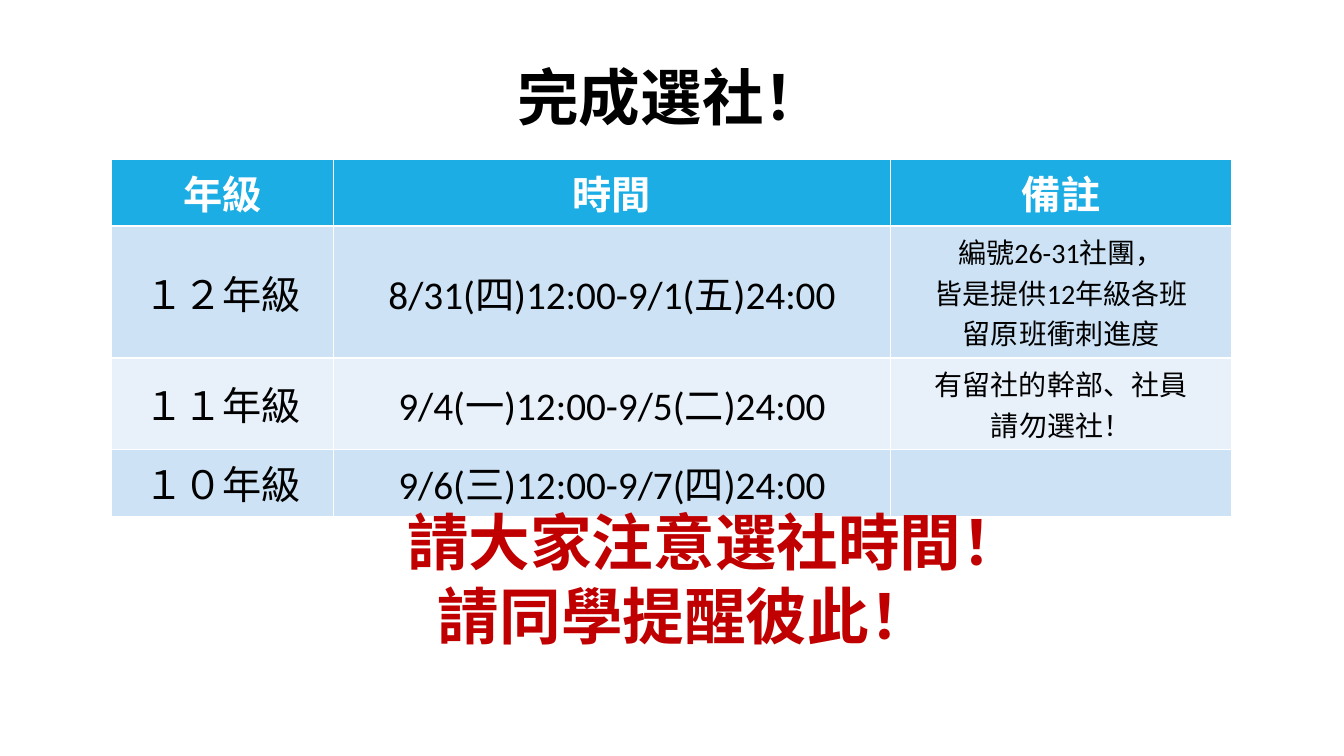
import pptx
import pptx.dml.color
import pptx.enum.text
import pptx.util
from pptx.dml.color import RGBColor
from pptx.util import Inches

WHITE = RGBColor(0xFF, 0xFF, 0xFF)
BLACK = RGBColor(0x00, 0x00, 0x00)
RED = RGBColor(0xC0, 0x00, 0x00)
HEADER_BLUE = RGBColor(0x1C, 0xAD, 0xE4)
BAND_DARK = RGBColor(0xCD, 0xE3, 0xF5)
BAND_LIGHT = RGBColor(0xE8, 0xF1, 0xFA)

COLUMN_WIDTHS = (2.2, 5.52, 3.39)
ROW_HEIGHT = 0.65
SCHEDULE = (
    ("年級", "時間", "備註"),
    ("１２年級", "8/31(四)12:00-9/1(五)24:00",
     "編號26-31社團，\n皆是提供12年級各班\n留原班衝刺進度"),
    ("１１年級", "9/4(一)12:00-9/5(二)24:00", "有留社的幹部、社員\v請勿選社！"),
    ("１０年級", "9/6(三)12:00-9/7(四)24:00", ""),
)


def write_text(frame, text, size, color, bold):
    """Fill a text frame with centred paragraphs in one style."""
    frame.text = text
    for paragraph in frame.paragraphs:
        paragraph.alignment = pptx.enum.text.PP_ALIGN.CENTER
        paragraph.font.name = "Calibri"
        paragraph.font.size = pptx.util.Pt(size)
        paragraph.font.bold = bold
        paragraph.font.color.rgb = color


def add_headline(slide, left, top, width, height, text, color):
    """Add a large bold text box."""
    headline = slide.shapes.add_textbox(
        Inches(left), Inches(top), Inches(width), Inches(height))
    frame = headline.text_frame
    frame.word_wrap = True
    frame.auto_size = pptx.enum.text.MSO_AUTO_SIZE.SHAPE_TO_FIT_TEXT
    write_text(frame, text, 44, color, True)


def add_schedule(slide, left, top):
    """Add the banded table of selection times by grade."""
    schedule = slide.shapes.add_table(
        len(SCHEDULE), len(COLUMN_WIDTHS), Inches(left), Inches(top),
        Inches(sum(COLUMN_WIDTHS)), Inches(ROW_HEIGHT * len(SCHEDULE))).table
    for column, width in zip(schedule.columns, COLUMN_WIDTHS):
        column.width = Inches(width)
    for row_index, entries in enumerate(SCHEDULE):
        schedule.rows[row_index].height = Inches(ROW_HEIGHT)
        is_header = row_index == 0
        band = BAND_DARK if row_index % 2 else BAND_LIGHT
        for column_index, entry in enumerate(entries):
            cell = schedule.cell(row_index, column_index)
            cell.fill.solid()
            cell.fill.fore_color.rgb = HEADER_BLUE if is_header else band
            cell.vertical_anchor = pptx.enum.text.MSO_ANCHOR.MIDDLE
            is_remark = column_index == 2 and not is_header
            write_text(cell.text_frame, entry, 20 if is_remark else 28,
                       WHITE if is_header else BLACK, is_header)


def main():
    """Build the club selection slide and save it."""
    deck = pptx.Presentation()
    deck.slide_width = Inches(13.33)
    deck.slide_height = Inches(7.5)
    slide = deck.slides.add_slide(deck.slide_layouts[6])
    add_schedule(slide, 1.11, 1.58)
    add_headline(slide, 3.81, 4.95, 5.96, 1.58,
                 "請大家注意選社時間！\n請同學提醒彼此！", RED)
    add_headline(slide, 3.68, 0.54, 5.96, 0.84, "完成選社！", BLACK)
    deck.save("out.pptx")


if __name__ == "__main__":
    main()
